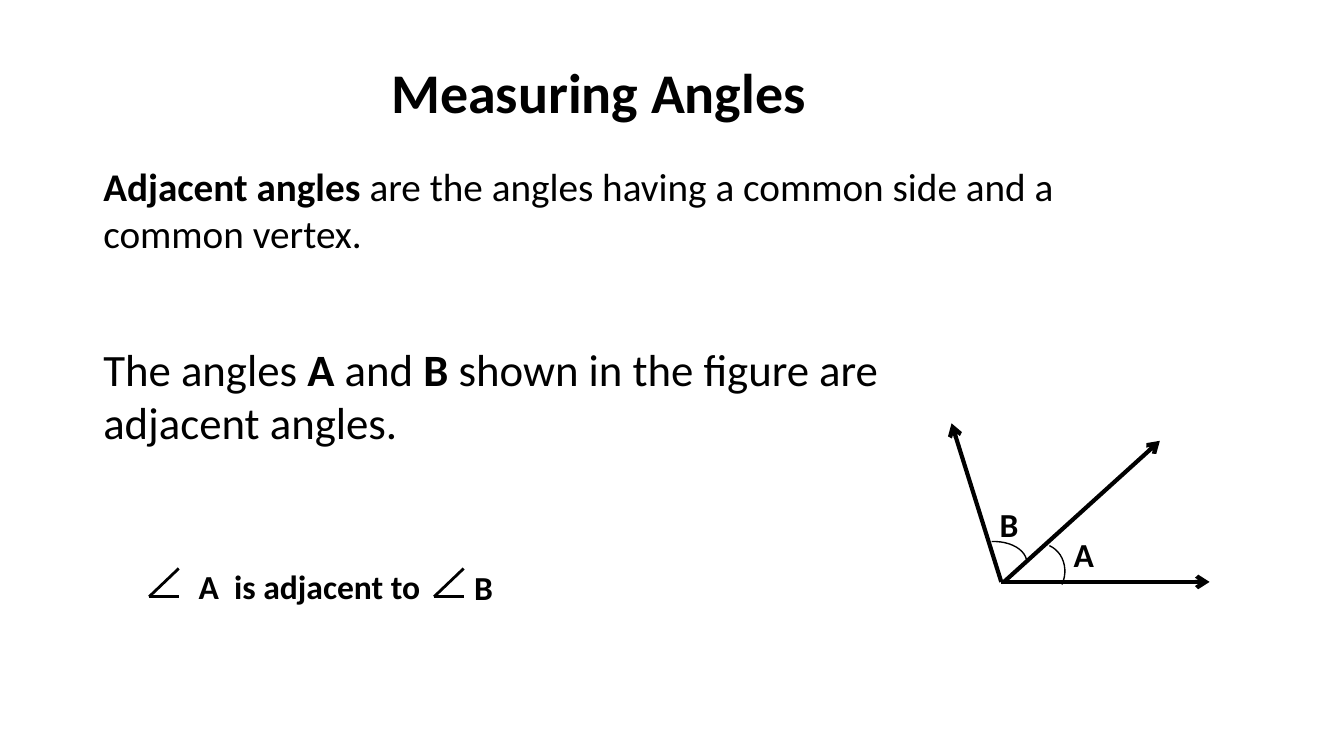
from dataclasses import dataclass

from lxml.etree import SubElement
from pptx import Presentation
from pptx.dml.color import RGBColor
from pptx.enum.shapes import MSO_CONNECTOR as Connector, MSO_SHAPE as Shape
from pptx.enum.text import MSO_ANCHOR as Anchor, PP_ALIGN as Align
from pptx.oxml.ns import qn
from pptx.util import Pt

PX = 9144  # EMU per px, 100 px to the inch
WIDTH = 1000 * PX
HEIGHT = WIDTH * 9 // 16


@dataclass(frozen=True)
class Theme:
    font: str = "Calibri"
    ink: RGBColor = RGBColor(0, 0, 0)
    paper: RGBColor = RGBColor(255, 255, 255)
    title: int = 30
    definition: int = 21
    example: int = 24
    label: int = 18
    ray: float = 2.25
    symbol: float = 1.5
    mark: float = 0.75


def add_run(paragraph, text, *, theme, size, bold=False):
    run = paragraph.add_run()
    run.text = text
    run.font.name = theme.font
    run.font.size = Pt(size)
    run.font.bold = bold
    run.font.color.rgb = theme.ink


class SlideBuilder:
    def __init__(self, slide, theme):
        self.slide, self.theme = slide, theme
        slide.background.fill.solid()
        slide.background.fill.fore_color.rgb = theme.paper

    def text(self, box, pieces, size, *, align=Align.LEFT, anchor=Anchor.TOP, wrap=True):
        """Pieces are (text, bold) pairs that form one paragraph."""
        frame = self.slide.shapes.add_textbox(*(v * PX for v in box)).text_frame
        frame.word_wrap = wrap
        frame.vertical_anchor = anchor
        paragraph = frame.paragraphs[0]
        paragraph.alignment = align
        for text, bold in pieces:
            add_run(paragraph, text, theme=self.theme, size=size, bold=bold)

    def label(self, box, text, *, wrap=True):
        self.text(box, [(text, True)], self.theme.label, wrap=wrap)

    def line(self, start, end, width, *, arrow=False):
        line = self.slide.shapes.add_connector(
            Connector.STRAIGHT, *(v * PX for v in (*start, *end)))
        line.line.color.rgb = self.theme.ink
        line.line.width = Pt(width)
        if arrow:
            SubElement(line.line._get_or_add_ln(), qn("a:tailEnd"), type="arrow")
        SubElement(line._element.spPr, qn("a:effectLst"))

    def arc(self, box, rotation, start, end):
        """Draw an arc from start to end, in degrees clockwise from the right."""
        arc = self.slide.shapes.add_shape(Shape.ARC, *(v * PX for v in box))
        arc.adjustments[0], arc.adjustments[1] = start * 0.6, end * 0.6
        arc.rotation = rotation
        arc.shadow.inherit = False
        arc.fill.background()
        arc.line.color.rgb = self.theme.ink
        arc.line.width = Pt(self.theme.mark)

    def angle_symbol(self, left, base):
        for rise in (21, 0):
            self.line((left, base), (left + 22, base - rise), self.theme.symbol)


def main():
    theme = Theme()
    deck = Presentation()
    deck.slide_width, deck.slide_height = WIDTH, HEIGHT
    page = SlideBuilder(deck.slides.add_slide(deck.slide_layouts[6]), theme)

    # Title and definition
    page.text((83, 15, 725, 106), [("Measuring Angles", True)], theme.title,
              align=Align.CENTER, anchor=Anchor.MIDDLE)
    page.text((67, 116, 808, 446), [
        ("Adjacent angles ", True),
        ("are the angles having a common side and a common vertex.", False),
    ], theme.definition)

    # Example
    page.text((67, 249, 675, 131), [
        ("The angles ", False), ("A ", True), ("and ", False), ("B ", True),
        ("shown in the figure are adjacent angles.", False),
    ], theme.example)

    # Figure: three rays from one vertex, with both angles marked
    page.label((789, 392, 56, 40), "A")
    page.label((734, 370, 56, 40), "B")
    page.arc((751, 404, 41, 45), 24.3, 270, 0)
    page.arc((722, 394, 33, 51), 87.5, 180, 270)
    vertex = (745, 433)
    for start, tip in ((vertex, (708, 315)), (vertex, (900, 433)), ((747, 433), (863, 328))):
        page.line(start, tip, theme.ray, arrow=True)

    # Statement in symbols
    for left in (111, 323):
        page.angle_symbol(left, 444)
    page.label((138, 416, 187, 40), "A  is adjacent to", wrap=False)
    page.label((343, 417, 35, 40), "B", wrap=False)

    deck.save("out.pptx")


if __name__ == "__main__":
    main()
